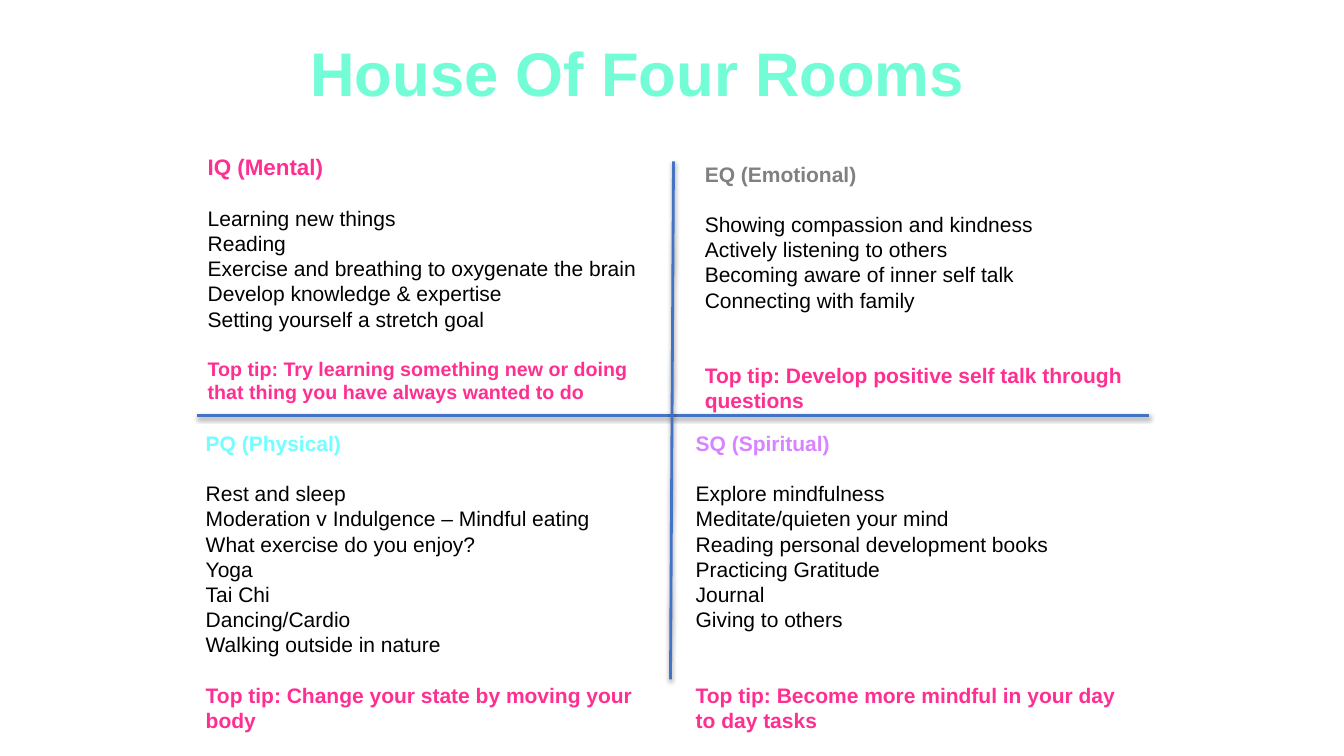
"""Build the House Of Four Rooms slide."""
from lxml import etree
from pptx import Presentation
from pptx.dml.color import RGBColor
from pptx.enum.shapes import MSO_CONNECTOR
from pptx.enum.text import MSO_ANCHOR, MSO_AUTO_SIZE
from pptx.oxml.ns import qn
from pptx.util import Pt

PX = 9144
PINK = RGBColor(0xFF, 0x2F, 0x92)
MINT = RGBColor(0x73, 0xFD, 0xD6)
CYAN = RGBColor(0x73, 0xFE, 0xFF)
GREY = RGBColor(0x80, 0x80, 0x80)
LILAC = RGBColor(0xD8, 0x83, 0xFF)
BLUE = RGBColor(0x44, 0x72, 0xC4)
BLACK = RGBColor(0, 0, 0)
ROW = 18


def add_box(x, y, w, h, inset):
    tf = s.shapes.add_textbox(x * PX, y * PX, w * PX, h * PX).text_frame
    tf.word_wrap = True
    tf.vertical_anchor = MSO_ANCHOR.TOP
    tf.margin_left = tf.margin_right = inset * PX
    tf.margin_top = tf.margin_bottom = 5 * PX
    return tf


def add_run(p, text, size, color, bold):
    r = p.add_run()
    r.text = text
    r.font.name = "Arial"
    r.font.size = Pt(size)
    r.font.bold = bold
    r.font.color.rgb = color


prs = Presentation()
prs.slide_width, prs.slide_height = 1333 * PX, 750 * PX
s = prs.slides.add_slide(prs.slide_layouts[6])

title = add_box(61, 38, 1217, 273, 10)
title.margin_left = 247 * PX
title.paragraphs[0].line_spacing = 0.9
add_run(title.paragraphs[0], "House Of Four Rooms", 44, MINT, True)

for x1, y1, x2, y2 in [(195, 412, 1140, 412), (668, 160, 665, 674)]:
    divider = s.shapes.add_connector(
        MSO_CONNECTOR.STRAIGHT, x1 * PX, y1 * PX, x2 * PX, y2 * PX)
    divider.line.color.rgb = BLUE
    divider.line.width = Pt(2)
    effects = etree.SubElement(divider._element.spPr, qn("a:effectLst"))
    shadow = etree.SubElement(
        effects, qn("a:outerShdw"), blurRad=str(Pt(3)), dist=str(Pt(1.6)),
        dir="5400000", rotWithShape="0")
    shade = etree.SubElement(shadow, qn("a:srgbClr"), val="000000")
    etree.SubElement(shade, qn("a:alpha"), val="38000")

rooms = [
    ((201, 147, 449, 261), "IQ (Mental)", 16, PINK,
     ["Learning new things", "Reading",
      "Exercise and breathing to oxygenate the brain",
      "Develop knowledge & expertise", "Setting yourself a stretch goal"],
     "Top tip: Try learning something new or doing that thing you have "
     "always wanted to do", 14, 1),
    ((199, 422, 471, 313), "PQ (Physical)", 15, CYAN,
     ["Rest and sleep", "Moderation v Indulgence – Mindful eating",
      "What exercise do you enjoy?", "Yoga", "Tai Chi", "Dancing/Cardio",
      "Walking outside in nature"],
     "Top tip: Change your state by moving your body", 15, 1),
    ((694, 155, 481, 263), "EQ (Emotional)", 15, GREY,
     ["Showing compassion and kindness", "Actively listening to others",
      "Becoming aware of inner self talk", "Connecting with family"],
     "Top tip: Develop positive self talk through questions", 15, 2),
    ((685, 422, 447, 313), "SQ (Spiritual)", 15, LILAC,
     ["Explore mindfulness", "Meditate/quieten your mind",
      "Reading personal development books", "Practicing Gratitude",
      "Journal", "Giving to others"],
     "Top tip: Become more mindful in your day to day tasks", 15, 2),
]
for place, heading, head_size, color, habits, tip, tip_size, gap in rooms:
    tf = add_box(*place, 5)
    tf.auto_size = MSO_AUTO_SIZE.SHAPE_TO_FIT_TEXT
    p = tf.paragraphs[0]
    p.space_after = Pt(ROW)
    add_run(p, heading, head_size, color, True)
    for habit in habits:
        add_run(tf.add_paragraph(), habit, 15, BLACK, False)
    p = tf.add_paragraph()
    p.space_before = Pt(ROW * gap)
    add_run(p, tip, tip_size, PINK, True)

prs.save("out.pptx")
